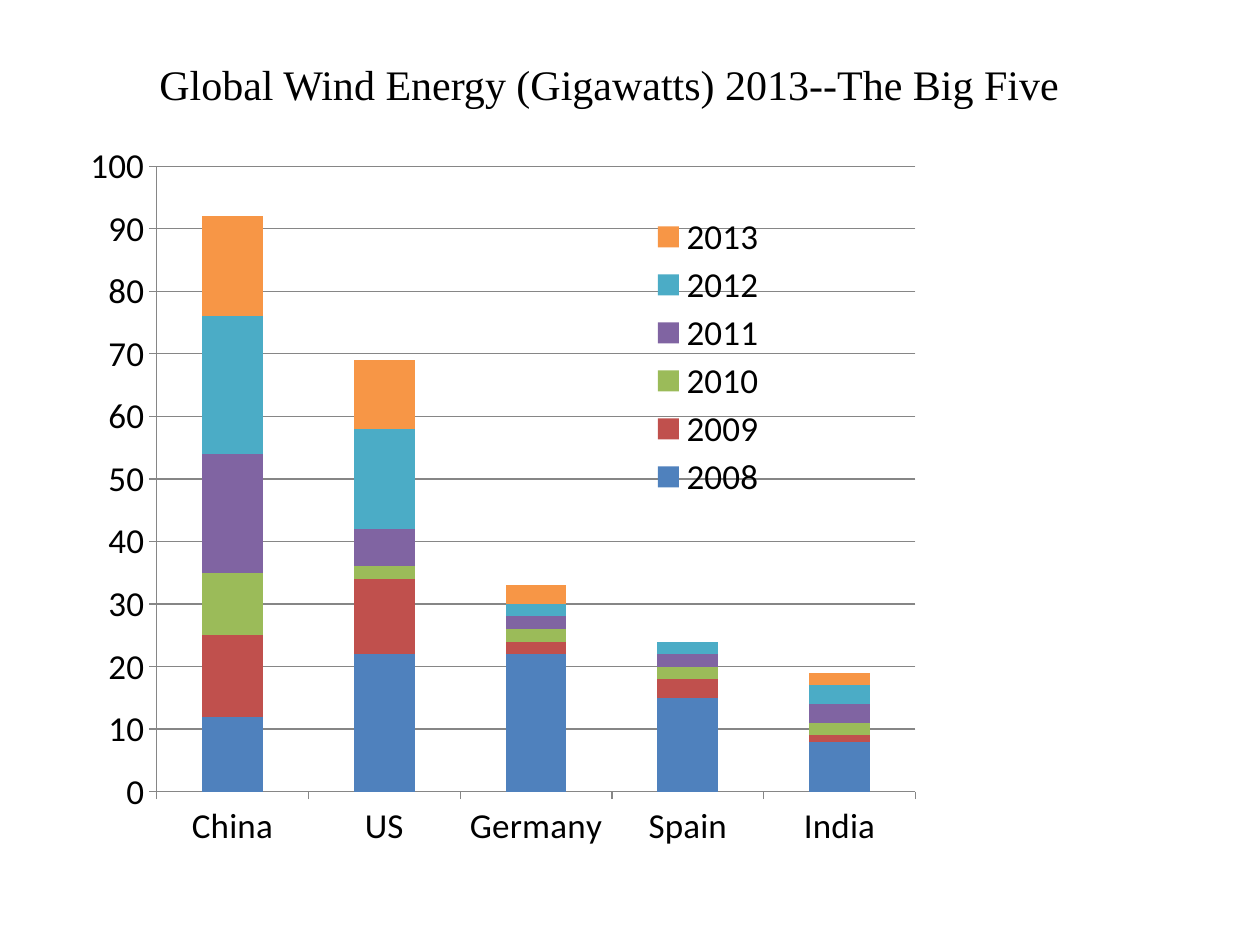
from dataclasses import dataclass

from lxml.etree import SubElement
from pptx import Presentation
from pptx.chart.data import CategoryChartData
from pptx.dml.color import RGBColor
from pptx.enum.chart import XL_CHART_TYPE as ChartType
from pptx.enum.chart import XL_LEGEND_POSITION as LegendPosition
from pptx.enum.chart import XL_TICK_MARK as TickMark
from pptx.enum.text import MSO_ANCHOR as Anchor
from pptx.enum.text import PP_ALIGN as Align
from pptx.oxml.ns import qn
from pptx.util import Inches, Pt

COUNTRIES = ["China", "US", "Germany", "Spain", "India"]
GIGAWATTS = {
    "2008": (12, 22, 22, 15, 8),
    "2009": (13, 12, 2, 3, 1),
    "2010": (10, 2, 2, 2, 2),
    "2011": (19, 6, 2, 2, 3),
    "2012": (22, 16, 2, 2, 3),
    "2013": (16, 11, 3, 0, 2),
}


@dataclass(frozen=True)
class Theme:
    title_font: str = "Times New Roman"
    chart_font: str = "Calibri"
    title_size: int = 24
    chart_size: int = 20
    text: str = "000000"
    rule: str = "868686"
    series: tuple = ("4F81BD", "C0504D", "9BBB59", "8064A2", "4BACC6", "F79646")


def color(code):
    return RGBColor.from_string(code)


def place_part(part, percents, before, target=None):
    """Place a chart part by percents of the chart, ahead of the named elements."""
    for old in part.findall(qn("c:layout")):
        part.remove(old)
    layout = SubElement(part, qn("c:layout"))
    manual = SubElement(layout, qn("c:manualLayout"))
    settings = [("layoutTarget", target)] if target else []
    settings += [("xMode", "edge"), ("yMode", "edge")]
    settings += [(tag, f"{percent / 100:.4f}") for tag, percent in zip("xywh", percents)]
    for tag, value in settings:
        SubElement(manual, qn(f"c:{tag}")).set("val", value)
    followers = [child for child in part if child.tag in map(qn, before)]
    if followers:
        followers[0].addprevious(layout)


class SlideBuilder:
    def __init__(self, deck, theme):
        self.deck = deck
        self.theme = theme
        self.page = deck.slides.add_slide(deck.slide_layouts[5])

    def frame(self, left, top, width, height):
        """Turn percents of the slide into lengths."""
        across, down = self.deck.slide_width, self.deck.slide_height
        return [int(percent * side / 100) for percent, side in
                zip((left, top, width, height), (across, down, across, down))]

    def title(self, text, *percents):
        box = self.page.shapes.title
        box.left, box.top, box.width, box.height = self.frame(*percents)
        box.text_frame.text = text
        box.text_frame.vertical_anchor = Anchor.MIDDLE
        para = box.text_frame.paragraphs[0]
        para.alignment = Align.LEFT
        para.font.name = self.theme.title_font
        para.font.size = Pt(self.theme.title_size)
        para.font.color.rgb = color(self.theme.text)

    def rule(self, line):
        line.color.rgb = color(self.theme.rule)
        line.width = Pt(0.75)

    def stacked_columns(self, categories, series, percents, plot_area, legend_area):
        data = CategoryChartData()
        data.categories = categories
        for name, values in series.items():
            data.add_series(name, values)
        chart = self.page.shapes.add_chart(
            ChartType.COLUMN_STACKED, *self.frame(*percents), data).chart
        chart.has_title = False
        chart.font.name = self.theme.chart_font
        chart.font.size = Pt(self.theme.chart_size)
        chart.font.color.rgb = color(self.theme.text)

        plot = chart.plots[0]
        plot.gap_width, plot.overlap = 150, 100
        plot.vary_by_categories = False
        for bars, code in zip(plot.series, self.theme.series):
            bars.format.fill.solid()
            bars.format.fill.fore_color.rgb = color(code)

        for axis in (chart.category_axis, chart.value_axis):
            axis.major_tick_mark = TickMark.OUTSIDE
            axis.minor_tick_mark = TickMark.NONE
            self.rule(axis.format.line)
        scale = chart.value_axis
        scale.minimum_scale, scale.maximum_scale, scale.major_unit = 0, 100, 10
        scale.has_major_gridlines = True
        self.rule(scale.major_gridlines.format.line)

        chart.has_legend = True
        chart.legend.position = LegendPosition.RIGHT
        chart.legend.include_in_layout = False
        root = chart.element
        place_part(root.find(".//" + qn("c:plotArea")), plot_area,
                   ["c:barChart"], target="inner")
        place_part(root.find(".//" + qn("c:legend")), legend_area,
                   ["c:overlay", "c:spPr", "c:txPr"])


def main():
    deck = Presentation()
    deck.slide_width, deck.slide_height = Inches(10), Inches(7.5)
    slide = SlideBuilder(deck, Theme())
    slide.stacked_columns(
        COUNTRIES, GIGAWATTS, percents=(0.8, 14.45, 79.15, 76.7),
        plot_area=(14.7, 4.1, 76.1, 86.3),
        legend_area=(63.5, 10.2, 13, 40.4))
    slide.title("Global Wind Energy (Gigawatts) 2013--The Big Five",
                11.65, 5.55, 80.8, 6.7)
    deck.save("out.pptx")


if __name__ == "__main__":
    main()
